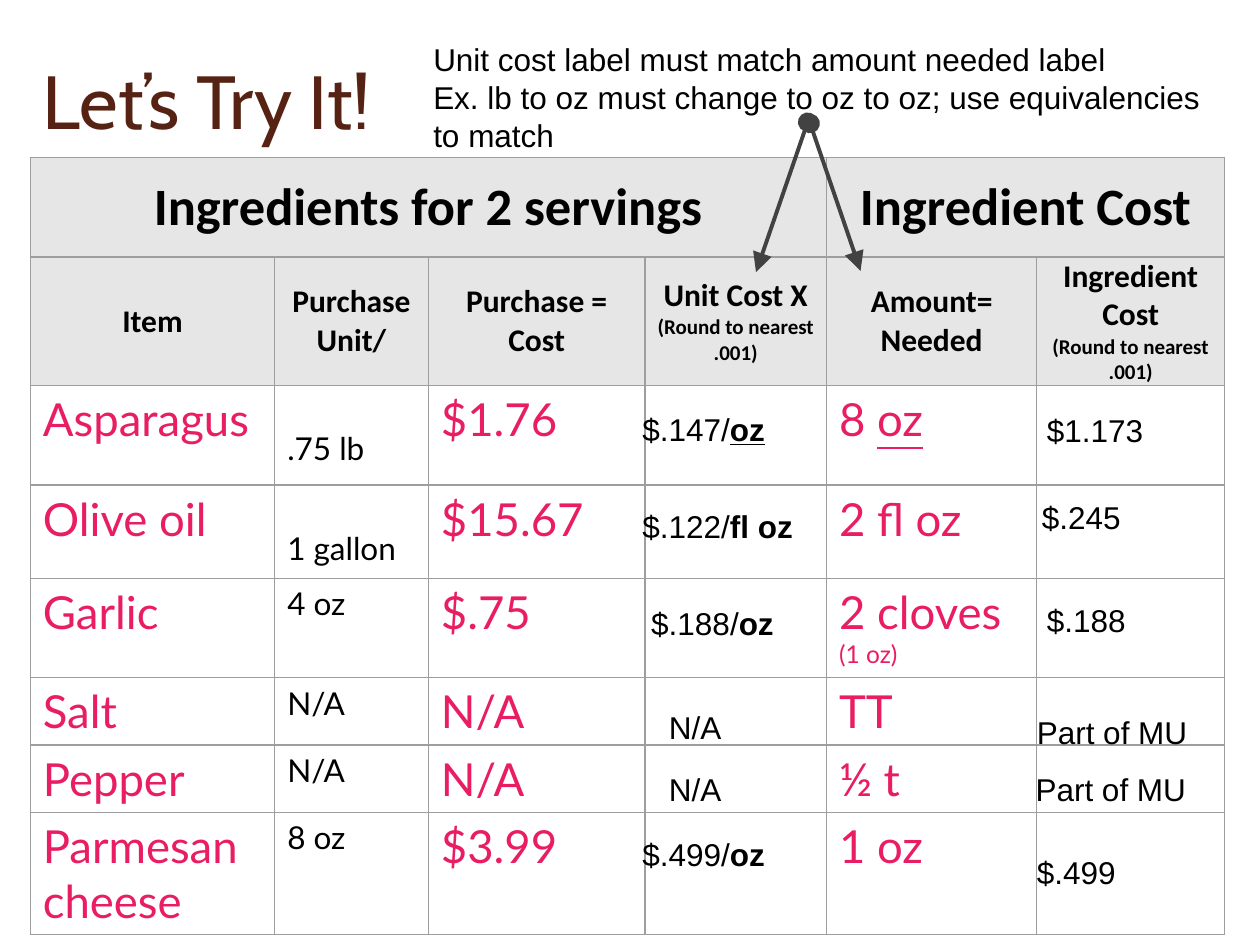
from lxml.etree import SubElement
from pptx import Presentation
from pptx.dml.color import RGBColor
from pptx.enum.shapes import MSO_CONNECTOR
from pptx.enum.text import MSO_ANCHOR, PP_ALIGN
from pptx.oxml.ns import qn
from pptx.util import Inches, Pt

BLACK = RGBColor(0x00, 0x00, 0x00)
BROWN = RGBColor(0x56, 0x22, 0x14)
PINK = RGBColor(0xE9, 0x1D, 0x63)
HEADER_GREY = RGBColor(0xE6, 0xE6, 0xE6)
BORDER_GREY = RGBColor(0x9E, 0x9E, 0x9E)
ARROW_GREY = RGBColor(0x42, 0x42, 0x42)

# Text formats
TITLE = dict(name="Cabin", size=Pt(43), color=BROWN)
BANNER = dict(name="Calibri", size=Pt(30), color=BLACK, bold=True)
HEADING = {**BANNER, "size": Pt(18)}
SMALL_HEADING = {**BANNER, "size": Pt(12)}
ENTRY = dict(name="Lato", size=Pt(26), color=PINK)
UNIT = dict(name="Lato", size=Pt(18), color=BLACK)
ASIDE = {**ENTRY, "size": Pt(14)}
NOTE = dict(name="Arial", size=Pt(18), color=BLACK)
BOLD = {**NOTE, "bold": True}

# Content: a text is a list of paragraphs, a paragraph a list of (words, format)
HEADLINE = "Let’s Try It!"
ADVICE = ["Unit cost label must match amount needed label",
          "Ex. lb to oz must change to oz to oz; use equivalencies to match"]
BANNERS = [("Ingredients for 2 servings", 0, 3), ("Ingredient Cost", 4, 5)]
ROUNDING = "(Round to nearest .001)"
HEADINGS = [["Item"], ["Purchase Unit/"], ["Purchase =", "Cost"],
            ["Unit Cost X", ROUNDING], ["Amount= Needed"],
            ["Ingredient Cost", ROUNDING]]
# Item, purchase unit, purchase cost, spans of the amount needed
INGREDIENTS = [
    ("Asparagus", ".75 lb", "$1.76", [("8 ", ENTRY), ("oz", {**ENTRY, "underline": True})]),
    ("Olive oil", "1 gallon", "$15.67", [("2 fl oz", ENTRY)]),
    ("Garlic", "4 oz", "$.75", [("2 cloves ", ENTRY), ("(1 oz)", ASIDE)]),
    ("Salt", "N/A", "N/A", [("TT", ENTRY)]),
    ("Pepper", "N/A", "N/A", [("½ t", ENTRY)]),
    ("Parmesan cheese", "8 oz", "$3.99", [("1 oz", ENTRY)]),
]
LOWERED_UNITS = (".75 lb", "1 gallon")
# Answers laid over the table: left, top, spans
ANSWERS = [
    (5.00, 3.15, [("$.147/", NOTE), ("oz", {**BOLD, "underline": True})]),
    (5.00, 3.92, [("$.122/", NOTE), ("fl oz", BOLD)]),
    (5.07, 4.69, [("$.188/", NOTE), ("oz", BOLD)]),
    (5.21, 5.52, [("N/A", NOTE)]),
    (5.21, 6.01, [("N/A", NOTE)]),
    (5.00, 6.53, [("$.499/", NOTE), ("oz", BOLD)]),
    (8.21, 3.16, [("$1.173", NOTE)]),
    (8.17, 3.85, [("$.245", NOTE)]),
    (8.21, 4.67, [("$.188", NOTE)]),
    (8.13, 5.56, [("Part of MU", NOTE)]),
    (8.12, 6.01, [("Part of MU", NOTE)]),
    (8.13, 6.67, [("$.499", NOTE)]),
]
ARROWS = [((6.41, 0.97), (6.00, 2.16)), ((6.43, 0.98), (6.83, 2.15))]

# Table grid
TABLE_LEFT, TABLE_TOP = 0.24, 1.25
COLUMNS = [1.94, 1.22, 1.72, 1.44, 1.67, 1.49]
ROWS = [0.79, 1.02, 0.79, 0.74, 0.79, 0.53, 0.53, 0.97]


def write(frame, paragraphs, align=PP_ALIGN.LEFT):
    for index, spans in enumerate(paragraphs):
        para = frame.add_paragraph() if index else frame.paragraphs[0]
        para.alignment = align
        for words, style in spans:
            span = para.add_run()
            span.text = words
            for key, value in style.items():
                if key == "color":
                    span.font.color.rgb = value
                else:
                    setattr(span.font, key, value)


def add_text(slide, left, top, width, height, paragraphs, anchor=MSO_ANCHOR.TOP):
    box = slide.shapes.add_textbox(*map(Inches, (left, top, width, height)))
    frame = box.text_frame
    frame.word_wrap = True
    frame.vertical_anchor = anchor
    for side in ("left", "top", "right", "bottom"):
        setattr(frame, f"margin_{side}", Inches(0.1))
    write(frame, paragraphs)


def format_cell(cell, across, down, fill=None):
    cell.margin_left = cell.margin_right = Inches(across)
    cell.margin_top = cell.margin_bottom = Inches(down)
    properties = cell._tc.get_or_add_tcPr()
    for side in ("lnL", "lnR", "lnT", "lnB"):
        line = SubElement(properties, qn(f"a:{side}"), w=str(Pt(0.75)))
        solid = SubElement(line, qn("a:solidFill"))
        SubElement(solid, qn("a:srgbClr"), val=str(BORDER_GREY))
    if fill is None:
        cell.fill.background()
    else:
        cell.fill.solid()
        cell.fill.fore_color.rgb = fill
        cell.vertical_anchor = MSO_ANCHOR.MIDDLE


def add_cost_table(slide):
    table = slide.shapes.add_table(
        len(ROWS), len(COLUMNS), Inches(TABLE_LEFT), Inches(TABLE_TOP),
        Inches(sum(COLUMNS)), Inches(sum(ROWS))).table
    table.first_row = table.horz_banding = False
    for column, width in zip(table.columns, COLUMNS):
        column.width = Inches(width)
    for row, height in zip(table.rows, ROWS):
        row.height = Inches(height)
    for row in range(len(ROWS)):
        for column in range(len(COLUMNS)):
            inset = (0.08, 0, HEADER_GREY) if row < 2 else (0.1, 0.05)
            format_cell(table.cell(row, column), *inset)

    # Header rows
    for words, first, last in BANNERS:
        cell = table.cell(0, first)
        cell.merge(table.cell(0, last))
        write(cell.text_frame, [[(words, BANNER)]], PP_ALIGN.CENTER)
    for column, lines in enumerate(HEADINGS):
        paragraphs = [[(words, SMALL_HEADING if words == ROUNDING else HEADING)]
                      for words in lines]
        write(table.cell(1, column).text_frame, paragraphs, PP_ALIGN.CENTER)

    # Ingredient rows
    for row, (item, unit, cost, amount) in enumerate(INGREDIENTS, start=2):
        entries = {0: [(item, ENTRY)], 1: [(unit, UNIT)], 2: [(cost, ENTRY)], 4: amount}
        for column, spans in entries.items():
            write(table.cell(row, column).text_frame, [spans])
        if unit in LOWERED_UNITS:
            table.cell(row, 1).margin_top = Inches(0.35)


def add_arrow(slide, start, end):
    arrow = slide.shapes.add_connector(
        MSO_CONNECTOR.STRAIGHT, *map(Inches, (*start, *end)))
    arrow.line.color.rgb = ARROW_GREY
    arrow.line.width = Pt(2.25)
    line = arrow.line._get_or_add_ln()
    SubElement(line, qn("a:headEnd"), type="oval", w="lg", len="lg")
    SubElement(line, qn("a:tailEnd"), type="triangle", w="lg", len="lg")
    SubElement(arrow._element.spPr, qn("a:effectLst"))


def main():
    deck = Presentation()
    deck.slide_width, deck.slide_height = Inches(10), Inches(7.5)
    slide = deck.slides.add_slide(deck.slide_layouts[6])

    add_text(slide, 0.24, 0.16, 8.2, 1.25, [[(HEADLINE, TITLE)]], MSO_ANCHOR.MIDDLE)
    add_cost_table(slide)
    for left, top, spans in ANSWERS:
        add_text(slide, left, top, 1.49, 0.52, [spans])
    for start, end in ARROWS:
        add_arrow(slide, start, end)
    add_text(slide, 3.34, 0.22, 6.38, 0.74, [[(words, NOTE)] for words in ADVICE])

    deck.save("out.pptx")


if __name__ == "__main__":
    main()
